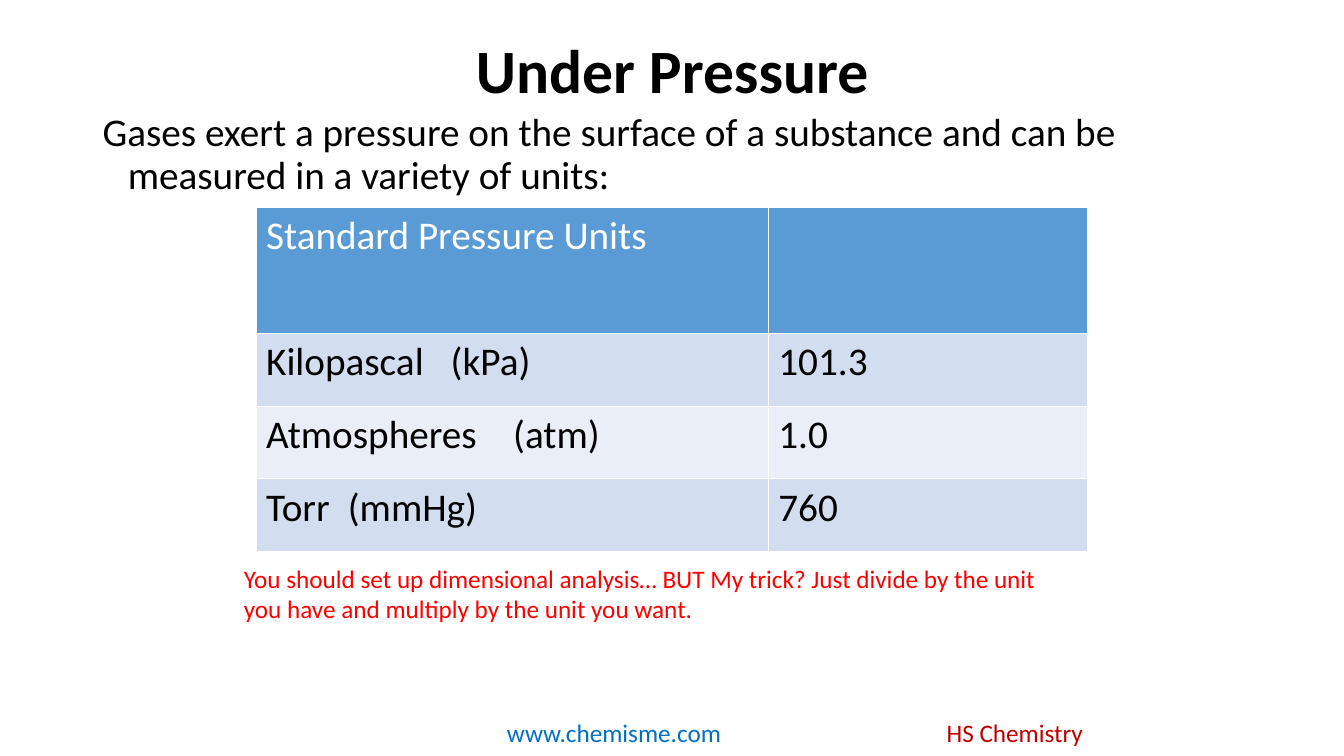
import pptx
import pptx.util
import pptx.dml.color
import pptx.enum.text
from dataclasses import dataclass
from lxml import etree
from pptx.util import Inches


@dataclass
class Theme:
    font: str = "Calibri"
    title: int = 44
    body: int = 28
    note: int = 18
    black: str = "000000"
    white: str = "FFFFFF"
    red: str = "FF0000"
    maroon: str = "C00000"
    link: str = "0070C0"
    head: str = "5B9BD5"
    bands: tuple = ("D2DEEF", "EAEFF7")


theme = Theme()


def style(par, size, color, bold=False):
    for run in par.runs:
        run.font.name = theme.font
        run.font.size = pptx.util.Pt(size)
        run.font.bold = bold
        run.font.color.rgb = pptx.dml.color.RGBColor.from_string(color)


def add_text(place, text, size, color, bold=False):
    box = slide.shapes.add_textbox(*[Inches(n) for n in place])
    frame = box.text_frame
    frame.word_wrap = True
    frame.text = text
    style(frame.paragraphs[0], size, color, bold)
    return frame


deck = pptx.Presentation()
deck.slide_width = Inches(13.33)
deck.slide_height = Inches(7.5)
slide = deck.slides.add_slide(deck.slide_layouts[6])

add_text((4.93, 7.07, 2.41, 0.4), "www.chemisme.com", theme.note, theme.link)
add_text((9.29, 7.07, 2.41, 0.4), "HS Chemistry", theme.note, theme.maroon)

title = add_text((0.92, 0, 11.5, 1.45), "Under Pressure", theme.title, theme.black, True)
title.vertical_anchor = pptx.enum.text.MSO_ANCHOR.MIDDLE
title.paragraphs[0].alignment = pptx.enum.text.PP_ALIGN.CENTER
title.paragraphs[0].line_spacing = 0.9

intro = add_text(
    (0.92, 1.07, 11.5, 4.76),
    "Gases exert a pressure on the surface of a substance and can be measured in a variety of units:",
    theme.body, theme.black)
intro.paragraphs[0].line_spacing = 0.9
props = intro.paragraphs[0]._p.get_or_add_pPr()
props.set("marL", str(Inches(0.25)))
props.set("indent", str(Inches(-0.25)))

rows = [
    ("Standard Pressure Units", "", None),
    ("Kilopascal\t(kPa)", "101.3", 1.83),
    ("Atmospheres\t(atm)", "1.0", 2.45),
    ("Torr\t(mmHg)", "760", 0.81),
]
table = slide.shapes.add_table(
    len(rows), 2, Inches(2.54), Inches(2.06), Inches(8.25), Inches(3.41)).table
for col, width in zip(table.columns, (5.08, 3.17)):
    col.width = Inches(width)

for r, (unit, value, stop) in enumerate(rows):
    table.rows[r].height = Inches(0.72 if r else 1.25)
    fill = theme.bands[(r - 1) % 2] if r else theme.head
    for c, text in enumerate((unit, value)):
        cell = table.cell(r, c)
        cell.fill.solid()
        cell.fill.fore_color.rgb = pptx.dml.color.RGBColor.from_string(fill)
        cell.text_frame.text = text
        par = cell.text_frame.paragraphs[0]
        if "\t" in text:
            props = par._p.get_or_add_pPr()
            tabs = etree.SubElement(props, pptx.oxml.ns.qn("a:tabLst"))
            etree.SubElement(tabs, pptx.oxml.ns.qn("a:tab"), pos=str(Inches(stop)), algn="l")
        par.font.size = pptx.util.Pt(theme.body)
        style(par, theme.body, theme.black if r else theme.white)

add_text(
    (2.32, 5.54, 8.33, 0.71),
    "You should set up dimensional analysis… BUT My trick? "
    "Just divide by the unit you have and multiply by the unit you want.",
    theme.note, theme.red)

deck.save("out.pptx")
